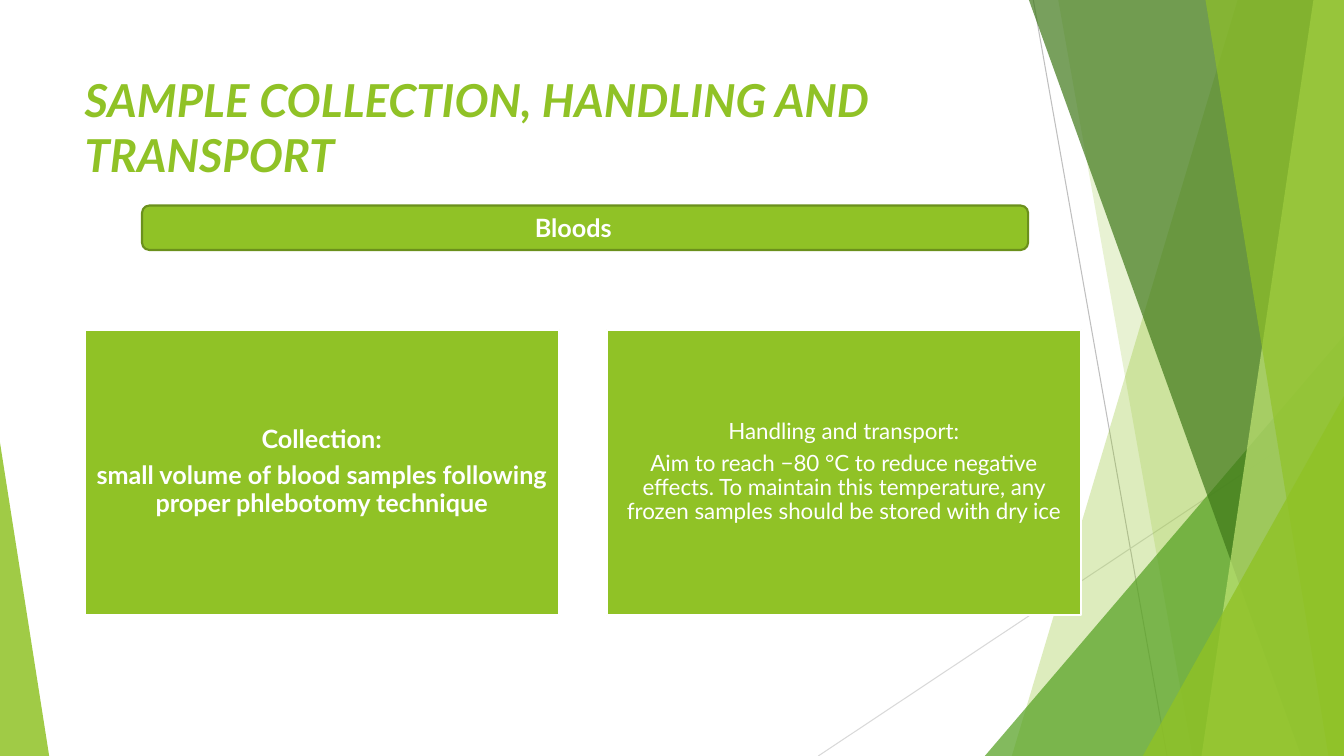
"""Build the slide on blood sample collection, handling and transport."""
from lxml.etree import SubElement
from pptx import Presentation
from pptx.dml.color import RGBColor
from pptx.enum.shapes import MSO_CONNECTOR, MSO_SHAPE
from pptx.enum.text import MSO_ANCHOR, MSO_AUTO_SIZE, PP_ALIGN
from pptx.oxml.ns import qn
from pptx.util import Cm, Pt

WIDTH, HEIGHT = 33.87, 19.05
FONT = "Lato"
GREEN, DARK_GREEN, WHITE = "90C226", "6B901C", "FFFFFF"

TITLE = "SAMPLE COLLECTION, HANDLING AND TRANSPORT"
BANNER = "Bloods"
CARDS = [
    (18, True, ["Collection:",
                "small volume of blood samples following proper phlebotomy technique"]),
    (16, False, ["Handling and transport:",
                 "Aim to reach −80 °C to reduce negative effects. To maintain this "
                 "temperature, any frozen samples should be stored with dry ice"]),
]
CARD_LEFT, CARD_TOP, CARD_WIDTH, CARD_HEIGHT, CARD_PITCH = 2.13, 8.31, 11.96, 7.19, 13.16

HAIRLINES = [
    ((26.04, 0), (29.41, HEIGHT), "BFBFBF"),
    ((WIDTH, 10.24), (20.62, HEIGHT), "D9D9D9"),
]
# Bands: top x, bottom x. Triangles: left, top, width, apex position.
FACETS = [
    ("band", (31.19, 25.5), GREEN, 30),
    ("band", (26.67, 30.05), GREEN, 20),
    ("triangle", (24.82, 8.46, 9.05, 1), "54A021", 72),
    ("band", (25.93, 32.79), "3F7819", 70),
    ("band", (33.1, 30.28), "C0E474", 70),
    ("band", (30.38, 33.48), GREEN, 65),
    ("triangle", (28.8, 9.98, 5.07, 1), GREEN, 80),
    ("triangle", (0, 11.15, 1.24, 0), GREEN, 85),
]


def color(value):
    return RGBColor.from_string(value)


def paint(shape, fill, line=None, opacity=100):
    shape.shadow.inherit = False
    shape.fill.solid()
    shape.fill.fore_color.rgb = color(fill)
    if opacity < 100:
        tint = shape.fill._xPr.find(qn("a:solidFill"))[0]
        SubElement(tint, qn("a:alpha"), val=str(opacity * 1000))
    if line:
        shape.line.color.rgb = color(line)
        shape.line.width = Pt(1.5)
    else:
        shape.line.fill.background()


def write(paragraph, text, size, fill, bold, alignment):
    paragraph.text = text
    paragraph.alignment = alignment
    font = paragraph.font
    font.name, font.size, font.bold = FONT, Pt(size), bold
    font.color.rgb = color(fill)


def add_box(slide, kind, left, top, width, height):
    return slide.shapes.add_shape(kind, Cm(left), Cm(top), Cm(width), Cm(height))


def add_hairline(slide, start, end, tint):
    line = slide.shapes.add_connector(
        MSO_CONNECTOR.STRAIGHT, *(Cm(value) for value in start + end))
    line.line.color.rgb = color(tint)
    line.line.width = Pt(0.75)
    SubElement(line._element.spPr, qn("a:effectLst"))


def add_facet(slide, kind, geometry, fill, opacity):
    if kind == "band":
        top_x, bottom_x = geometry
        builder = slide.shapes.build_freeform(Cm(top_x), 0)
        corners = [(WIDTH, 0), (WIDTH, HEIGHT), (bottom_x, HEIGHT)]
        builder.add_line_segments([(Cm(x), Cm(y)) for x, y in corners], close=True)
        facet = builder.convert_to_shape()
    else:
        left, top, width, apex = geometry
        facet = add_box(slide, MSO_SHAPE.ISOSCELES_TRIANGLE, left, top, width, HEIGHT - top)
        facet.adjustments[0] = apex
    paint(facet, fill, opacity=opacity)


def add_title(slide):
    title = slide.shapes.title
    title.left, title.top, title.width, title.height = Cm(1.88), Cm(1.7), Cm(23.88), Cm(3.66)
    frame = title.text_frame
    frame.auto_size = MSO_AUTO_SIZE.NONE
    frame.vertical_anchor = MSO_ANCHOR.TOP
    write(frame.paragraphs[0], TITLE, 32.4, GREEN, True, PP_ALIGN.LEFT)
    frame.paragraphs[0].font.italic = True


def add_card(slide, index, size, bold, lines):
    card = add_box(slide, MSO_SHAPE.RECTANGLE, CARD_LEFT + index * CARD_PITCH,
                   CARD_TOP, CARD_WIDTH, CARD_HEIGHT)
    paint(card, GREEN, WHITE)
    frame = card.text_frame
    frame.word_wrap = True
    frame.vertical_anchor = MSO_ANCHOR.MIDDLE
    frame.margin_left = frame.margin_right = Cm(0.18)
    frame.margin_top = frame.margin_bottom = Cm(0.18)
    for number, text in enumerate(lines):
        paragraph = frame.add_paragraph() if number else frame.paragraphs[0]
        write(paragraph, text, size, WHITE, bold, PP_ALIGN.CENTER)
        paragraph.line_spacing = 0.9
        paragraph.space_after = Pt(size * 0.35)


def add_banner(slide):
    banner = add_box(slide, MSO_SHAPE.ROUNDED_RECTANGLE, 3.58, 5.18, 22.33, 1.12)
    paint(banner, GREEN, DARK_GREEN)
    frame = banner.text_frame
    frame.margin_right = Cm(0.84)
    frame.margin_top = frame.margin_bottom = 0
    frame.vertical_anchor = MSO_ANCHOR.MIDDLE
    write(frame.paragraphs[0], BANNER, 18, WHITE, True, PP_ALIGN.CENTER)


def main():
    presentation = Presentation()
    presentation.slide_width, presentation.slide_height = Cm(WIDTH), Cm(HEIGHT)
    slide = presentation.slides.add_slide(presentation.slide_layouts[5])
    for hairline in HAIRLINES:
        add_hairline(slide, *hairline)
    for facet in FACETS:
        add_facet(slide, *facet)
    add_title(slide)
    for index, card in enumerate(CARDS):
        add_card(slide, index, *card)
    add_banner(slide)
    presentation.save("out.pptx")


if __name__ == "__main__":
    main()
